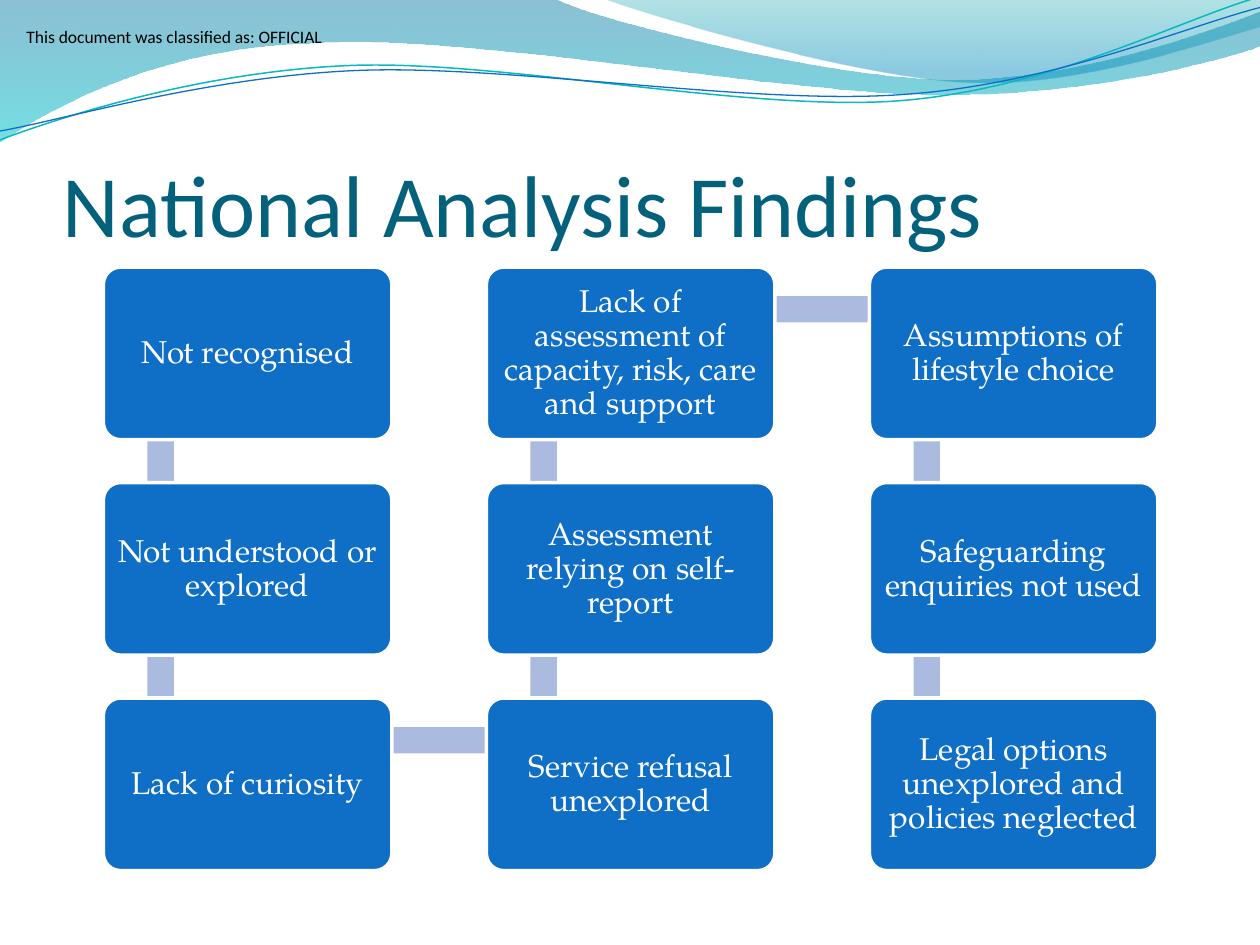
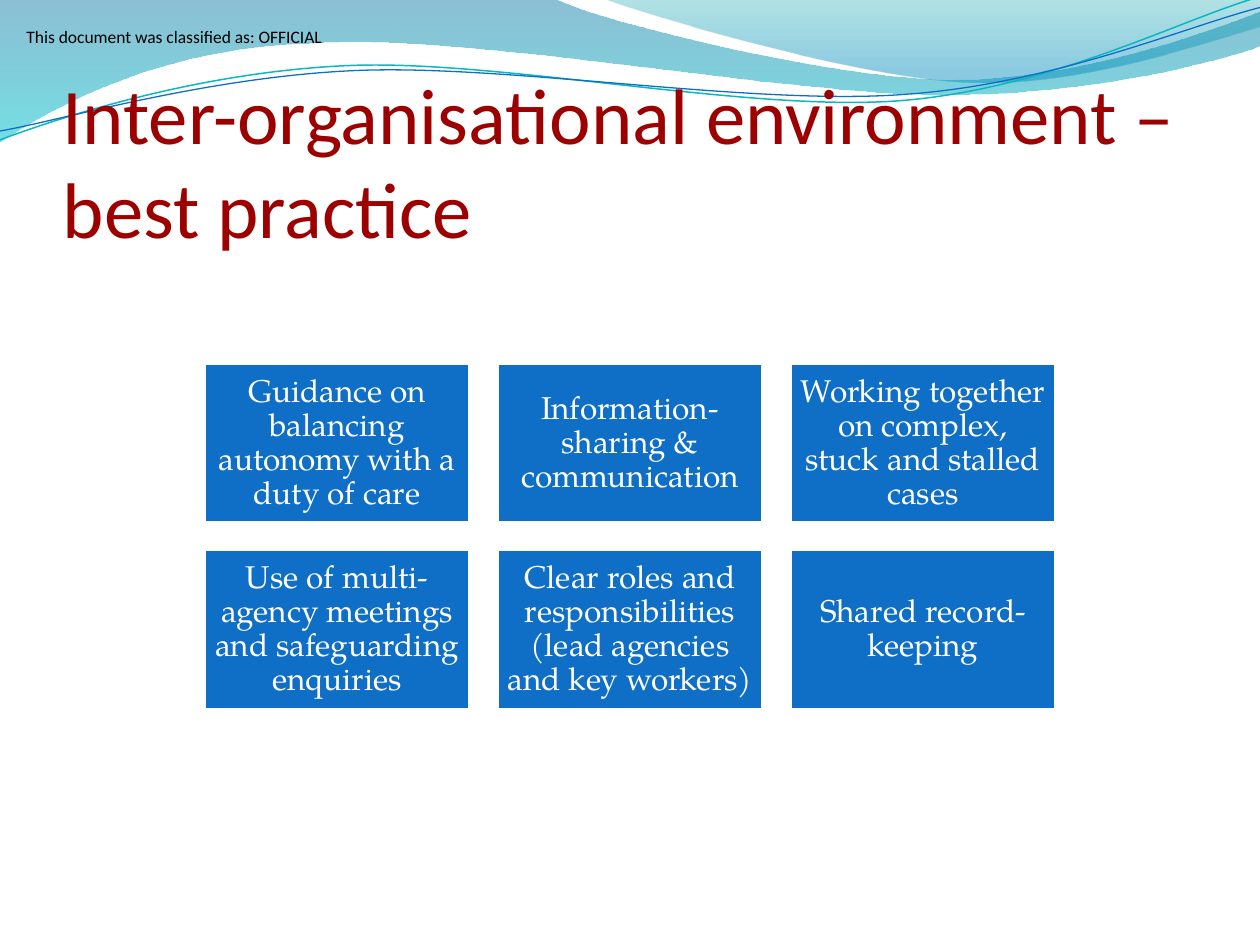
import math

from pptx import Presentation, oxml
from pptx.dml.color import RGBColor
from pptx.enum import shapes, text
from pptx.oxml import ns
from pptx.util import Inches, Pt

WHITE = RGBColor(0xFF, 0xFF, 0xFF)
BLACK = RGBColor(0, 0, 0)
BLUE = RGBColor(0x0F, 0x6F, 0xC6)
PALE = RGBColor(0xAB, 0xBB, 0xDF)
TEAL = RGBColor(0x04, 0x61, 0x7B)
RED = RGBColor(0x9C, 0x00, 0x01)
AQUA = RGBColor(0x0A, 0xB8, 0xBF)
DEEP = RGBColor(0x00, 0x74, 0xA1)
CYAN = RGBColor(0x00, 0xC6, 0xCF)
SEA = RGBColor(0x00, 0xA1, 0xA9)
SKY = RGBColor(0x00, 0x8B, 0xBF)

HEAD = "Calibri"
BODY = "TeX Gyre Pagella"
TILT = 2.7

WAVE = [[(0, 0)], [(4.4, -0.01)],
        [(4.76, 0.17), (6.64, 0.63), (7.58, 0.63)],
        [(8.53, 0.63), (9.58, 0.26), (10, 0.09)],
        [(10.01, 0.36)],
        [(9.83, 0.44), (8.7, 0.76), (7.46, 0.75)],
        [(6.22, 0.75), (3.82, 0.28), (2.57, 0.34)],
        [(1.29, 0.36), (0.46, 0.83), (-0.01, 1.13)]]
CREST = [[(4.79, -0.01)],
         [(5.09, 0.11), (6.82, 0.62), (7.69, 0.65)],
         [(8.56, 0.69), (9.61, 0.32), (10, 0.21)],
         [(10, 0)]]
UPPER = [[(0, 1.11)],
         [(0.48, 0.93), (1.58, 0.57), (2.77, 0.52)],
         [(3.95, 0.47), (5.93, 0.89), (7.13, 0.8)],
         [(8.33, 0.71), (9.38, 0.15), (9.98, -0.02)]]
LOWER = [[(0, 1.04)],
         [(0.47, 0.96), (1.64, 0.61), (2.83, 0.56)],
         [(4.03, 0.51), (5.97, 0.84), (7.17, 0.75)],
         [(8.36, 0.67), (9.41, 0.21), (10, 0.06)]]

FINDINGS = [
    (0, 0, "Not recognised"),
    (0, 1, "Not understood or explored"),
    (0, 2, "Lack of curiosity"),
    (1, 2, "Service refusal unexplored"),
    (1, 1, "Assessment relying on self-report"),
    (1, 0, "Lack of assessment of capacity, risk, care and support"),
    (2, 0, "Assumptions of lifestyle choice"),
    (2, 1, "Safeguarding enquiries not used"),
    (2, 2, "Legal options unexplored and policies neglected"),
]
PRACTICE = [
    "Guidance on balancing autonomy with a duty of care",
    "Information-sharing & communication",
    "Working together on complex, stuck and stalled cases",
    "Use of multi-agency meetings and safeguarding enquiries",
    "Clear roles and responsibilities (lead agencies and key workers)",
    "Shared record-keeping",
]


def outline(slide, parts, close):
    points = [(Inches(x), Inches(y)) for part in parts for x, y in part]
    pen = slide.shapes.build_freeform(*points[0])
    pen.add_line_segments(points[1:], close=close)
    shape = pen.convert_to_shape()
    shape.shadow.inherit = False
    lines = iter(list(shape.element.spPr.iter(ns.qn("a:lnTo"))))
    for part in parts[1:]:
        first, *rest = [next(lines) for _ in part]
        if rest:
            bend = oxml.parse_xml(f'<a:cubicBezTo {ns.nsdecls("a")}/>')
            first.addprevious(bend)
            for line in (first, *rest):
                bend.append(line[0])
                line.getparent().remove(line)
    return shape


def band(slide, parts, stops):
    shape = outline(slide, parts, True)
    shape.line.fill.background()
    shape.fill.gradient()
    shape.fill.gradient_angle = 270
    for stop, (place, color, _) in zip(shape.fill.gradient_stops, stops):
        stop.position = place
        stop.color.rgb = color
    tints = list(shape.element.spPr.iter(ns.qn("a:srgbClr")))
    for tint, (_, _, alpha) in zip(tints, stops):
        tint.append(oxml.parse_xml(
            f'<a:alpha {ns.nsdecls("a")} val="{alpha * 1000}"/>'))


def turn(parts, mid):
    cos, sin = math.cos(math.radians(TILT)), math.sin(math.radians(TILT))
    left, top = mid
    return [[(left + (x - left) * cos - (y - top) * sin,
              top + (x - left) * sin + (y - top) * cos) for x, y in part]
            for part in parts]


def curve(slide, parts, mid, color, width):
    shape = outline(slide, turn(parts, mid), False)
    shape.rotation = 360 - TILT
    shape.fill.background()
    shape.line.color.rgb = color
    shape.line.width = Pt(width)


def label(slide, box, words, size, color):
    frame = slide.shapes.add_textbox(*map(Inches, box)).text_frame
    frame.margin_left = frame.margin_right = 0
    frame.margin_top = frame.margin_bottom = 0
    line = frame.paragraphs[0]
    line.text = words
    line.font.name = HEAD
    line.font.size = Pt(size)
    line.font.color.rgb = color
    return frame


def base(deck, title, size, color):
    slide = deck.slides.add_slide(deck.slide_layouts[6])
    band(slide, WAVE, [(0, DEEP, 45), (1, CYAN, 55)])
    band(slide, CREST, [(0, SEA, 30), (0.8, SKY, 45)])
    curve(slide, UPPER, (4.99, 0.58), AQUA, 0.85)
    curve(slide, LOWER, (5, 0.59), BLUE, 0.75)
    label(slide, (0.21, 0.21, 2.38, 0.17),
          "This document was classified as: OFFICIAL", 10, BLACK)
    frame = label(slide, (0.5, 0.77, 9, 1.25), title, size, color)
    frame.word_wrap = True
    frame.margin_top = Inches(0.05)
    frame.vertical_anchor = text.MSO_ANCHOR.BOTTOM
    return slide


def block(slide, kind, box, fill):
    shape = slide.shapes.add_shape(kind, *map(Inches, box))
    shape.shadow.inherit = False
    shape.fill.solid()
    shape.fill.fore_color.rgb = fill
    shape.line.fill.background()
    return shape


def card(slide, kind, box, words):
    shape = block(slide, kind, box, BLUE)
    shape.line.color.rgb = WHITE
    shape.line.width = Pt(2)
    frame = shape.text_frame
    frame.word_wrap = True
    frame.vertical_anchor = text.MSO_ANCHOR.MIDDLE
    frame.margin_left = frame.margin_right = Inches(0.07)
    frame.margin_top = frame.margin_bottom = Inches(0.07)
    line = frame.paragraphs[0]
    line.text = words
    line.alignment = text.PP_ALIGN.CENTER
    line.line_spacing = 0.9
    line.font.name = BODY
    line.font.size = Pt(18)
    line.font.color.rgb = WHITE
    return shape


def snake(slide, left, top, width, height):
    wide, high = 2.29, 1.37
    across, down = (width - wide) / 2, (height - high) / 2
    spots = [(left + col * across, top + row * down) for col, row, _ in FINDINGS]
    for (x, y), (ahead, below) in zip(spots, spots[1:]):
        if ahead == x:
            box = (x + 0.35, min(y, below) + 0.34, 0.21, down)
        else:
            box = (x + 0.47, y + 0.23, across, 0.21)
        block(slide, shapes.MSO_SHAPE.RECTANGLE, box, PALE)
    for (x, y), (_, _, words) in zip(spots, FINDINGS):
        shape = card(slide, shapes.MSO_SHAPE.ROUNDED_RECTANGLE,
                     (x, y, wide, high), words)
        shape.adjustments[0] = 0.1


def grid(slide, left, top, width, height):
    wide, high = 2.11, 1.27
    across, down = (width - wide) / 2, height - high
    for index, words in enumerate(PRACTICE):
        row, col = divmod(index, 3)
        box = (left + col * across, top + row * down, wide, high)
        card(slide, shapes.MSO_SHAPE.RECTANGLE, box, words)


def main():
    deck = Presentation()
    deck.slide_width = Inches(10)
    deck.slide_height = Inches(7.5)
    snake(base(deck, "National Analysis Findings", 50, TEAL),
          0.82, 2.12, 8.37, 4.79)
    grid(base(deck, "Inter-organisational environment – best practice", 45, RED),
         1.62, 2.88, 6.76, 2.75)
    deck.save("out.pptx")


if __name__ == "__main__":
    main()
